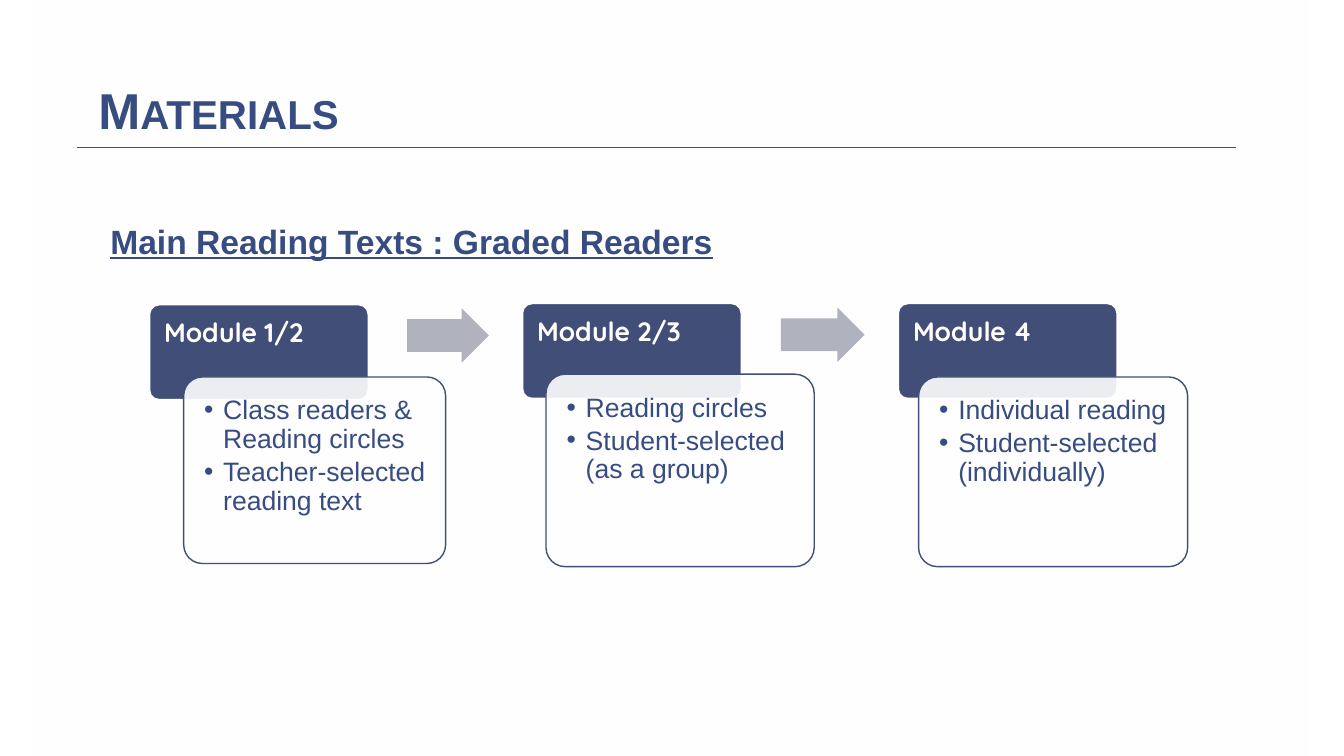
from lxml import etree
from pptx import Presentation
from pptx import util as u
from pptx.dml import color
from pptx.enum import shapes, text
from pptx.oxml import ns

NAVY, INK, GREY, WHITE = "414E77", "374C81", "B0B2BD", "FFFFFF"

# Header box, card box and bullets of each module, in centimetres
MODULES = [
    ("Module 1/2", (3.77, 7.68, 5.51, 2.39), (4.63, 9.5, 6.6, 4.7),
     ["Class readers & Reading circles", "Teacher-selected reading text"]),
    ("Module 2/3", (13.17, 7.65, 5.51, 2.39), (13.76, 9.43, 6.76, 4.85),
     ["Reading circles", "Student-selected (as a group)"]),
    ("Module 4", (22.64, 7.65, 5.51, 2.39), (23.15, 9.5, 6.78, 4.78),
     ["Individual reading", "Student-selected (individually)"]),
]
ARROWS = [(10.26, 7.77, 2.06, 1.37), (19.68, 7.75, 2.11, 1.37)]


def rgb(value):
    return color.RGBColor.from_string(value)


def lengths(box):
    return [u.Cm(value) for value in box]


def add_child(parent, tag, **attributes):
    child = etree.SubElement(parent, ns.qn(tag))
    for name, value in attributes.items():
        child.set(name, value)
    return child


def set_frame(shape, insets, anchor=text.MSO_ANCHOR.TOP):
    frame = shape.text_frame
    frame.word_wrap = True
    frame.auto_size = text.MSO_AUTO_SIZE.NONE
    frame.vertical_anchor = anchor
    (frame.margin_left, frame.margin_top,
     frame.margin_right, frame.margin_bottom) = lengths(insets)
    return frame


def add_run(paragraph, words, size, ink, spacing, bold=False, font_name="Arial"):
    paragraph.alignment = text.PP_ALIGN.LEFT
    paragraph.line_spacing = spacing
    run = paragraph.add_run()
    run.text = words
    run.font.name = font_name
    run.font.size = u.Pt(size)
    run.font.bold = bold
    run.font.color.rgb = rgb(ink)
    return run


def add_block(slide, kind, box, fill, line=None, adjustments=()):
    shape = slide.shapes.add_shape(kind, *lengths(box))
    shape.shadow.inherit = False
    shape.fill.solid()
    shape.fill.fore_color.rgb = rgb(fill)
    if line:
        shape.line.color.rgb = rgb(line)
        shape.line.width = u.Pt(1)
    else:
        shape.line.fill.background()
    for index, value in enumerate(adjustments):
        shape.adjustments[index] = value
    return shape


def add_backdrop(slide, box):
    """Lay a white panel, fading to one corner, behind everything else."""
    panel = add_block(slide, shapes.MSO_SHAPE.RECTANGLE, box, WHITE)
    panel.fill.gradient()
    panel.fill.gradient_angle = 230
    for stop in panel.fill.gradient_stops:
        stop.color.rgb = rgb(WHITE)
    last_color = panel._element.spPr.findall(".//" + ns.qn("a:srgbClr"))[-1]
    add_child(last_color, "a:alpha", val="55000")
    slide.shapes._spTree.insert(2, panel._element)


def add_title(slide, box):
    """Fill the title placeholder and rule a line below it."""
    left, top, width, height = box
    title = slide.shapes.title
    title.left, title.top, title.width, title.height = lengths(box)
    frame = set_frame(title, (0.33, 0.18, 0.33, 0.18), text.MSO_ANCHOR.BOTTOM)
    run = add_run(frame.paragraphs[0], "Materials", 36, INK, 0.85, bold=True)
    run._r.get_or_add_rPr().set("cap", "small")

    start, end, level = left - 0.22, left + width + 1.8, top + height
    rule = slide.shapes.add_connector(
        shapes.MSO_CONNECTOR.STRAIGHT, *lengths((start, level, end, level)))
    rule.line.color.rgb = rgb(NAVY)
    rule.line.width = u.Pt(0.5)
    add_child(rule._element.spPr, "a:effectLst")


def add_subtitle(slide, box):
    shape = slide.shapes.add_textbox(*lengths(box))
    frame = set_frame(shape, (0.25, 0.13, 0.25, 0.13))
    run = add_run(frame.paragraphs[0], "Main Reading Texts : Graded Readers",
                  24, INK, 1.5, bold=True)
    run.font.underline = True


def add_header(slide, box, name):
    header = add_block(slide, shapes.MSO_SHAPE.ROUNDED_RECTANGLE, box, NAVY, WHITE, [0.1])
    frame = set_frame(header, (0.3, 0.3, 0.3, 0.2))
    add_run(frame.paragraphs[0], name, 19, WHITE, 0.9, bold=True, font_name="Quicksand")


def add_card(slide, box, bullets):
    """Draw a slightly transparent card with a bulleted list."""
    card = add_block(slide, shapes.MSO_SHAPE.ROUNDED_RECTANGLE, box, WHITE, NAVY, [0.1])
    fill_color = card._element.spPr.find(ns.qn("a:solidFill"))[0]
    add_child(fill_color, "a:alpha", val="90000")
    frame = set_frame(card, (0.38, 0.36, 0.36, 0.36))
    for index, words in enumerate(bullets):
        paragraph = frame.add_paragraph() if index else frame.paragraphs[0]
        properties = paragraph._p.get_or_add_pPr()
        properties.set("marL", str(u.Cm(0.48)))
        properties.set("indent", str(-u.Cm(0.48)))
        add_child(properties, "a:buFont", typeface="Arial")
        add_child(properties, "a:buChar", char="•")
        paragraph.space_after = u.Pt(3)
        add_run(paragraph, words, 19, INK, 0.9)


def main():
    presentation = Presentation()
    presentation.slide_width, presentation.slide_height = lengths((33.87, 19.05))
    slide = presentation.slides.add_slide(presentation.slide_layouts[5])
    add_backdrop(slide, (0.84, 0, 32.16, 19.05))
    add_title(slide, (2.15, 1.14, 27.2, 2.57))
    add_subtitle(slide, (2.53, 4.93, 30.2, 1.8))
    for name, header_box, card_box, bullets in MODULES:
        add_header(slide, header_box, name)
        add_card(slide, card_box, bullets)
    for box in ARROWS:
        add_block(slide, shapes.MSO_SHAPE.RIGHT_ARROW, box, GREY, adjustments=[0.6, 0.5])
    presentation.save("out.pptx")


if __name__ == "__main__":
    main()
